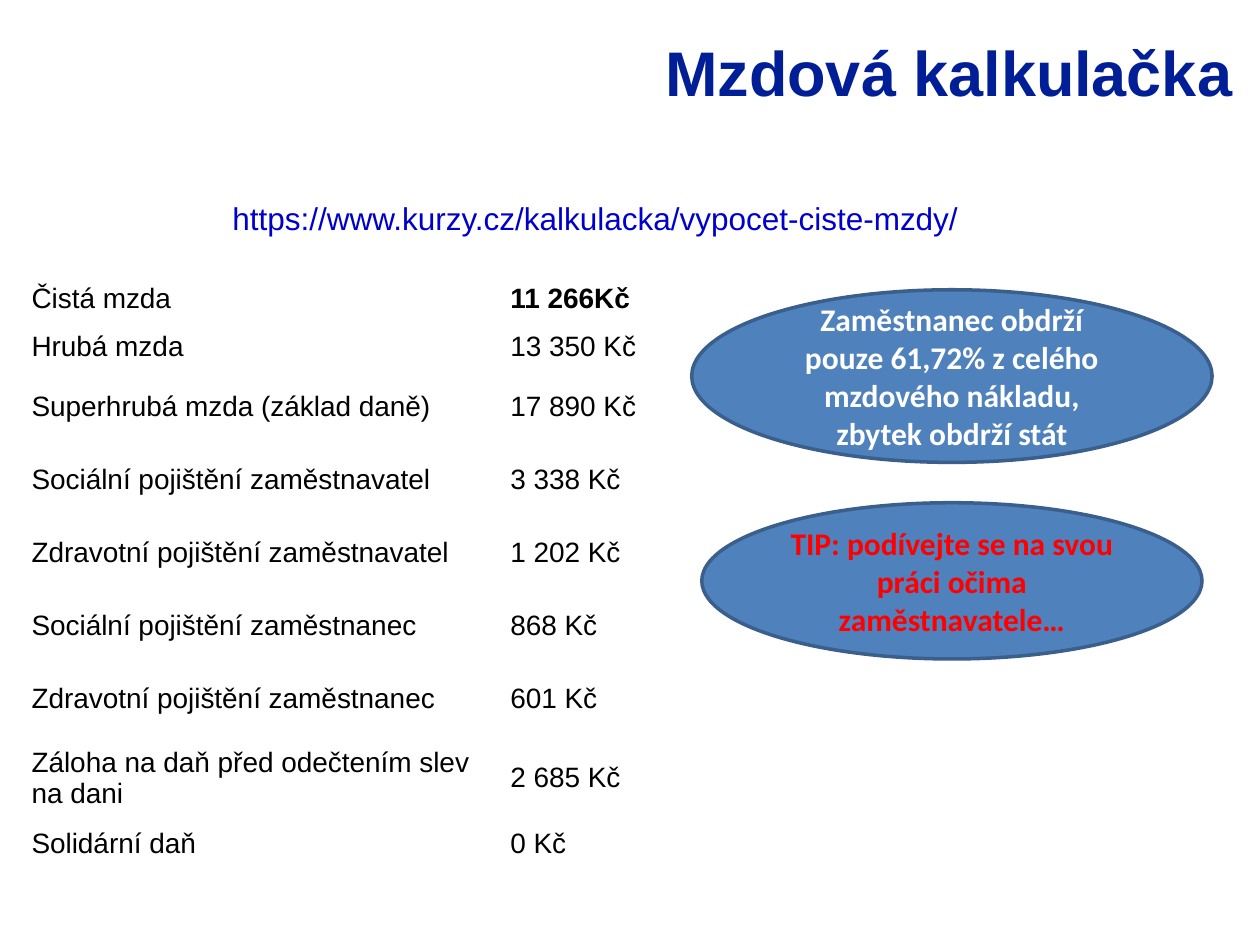
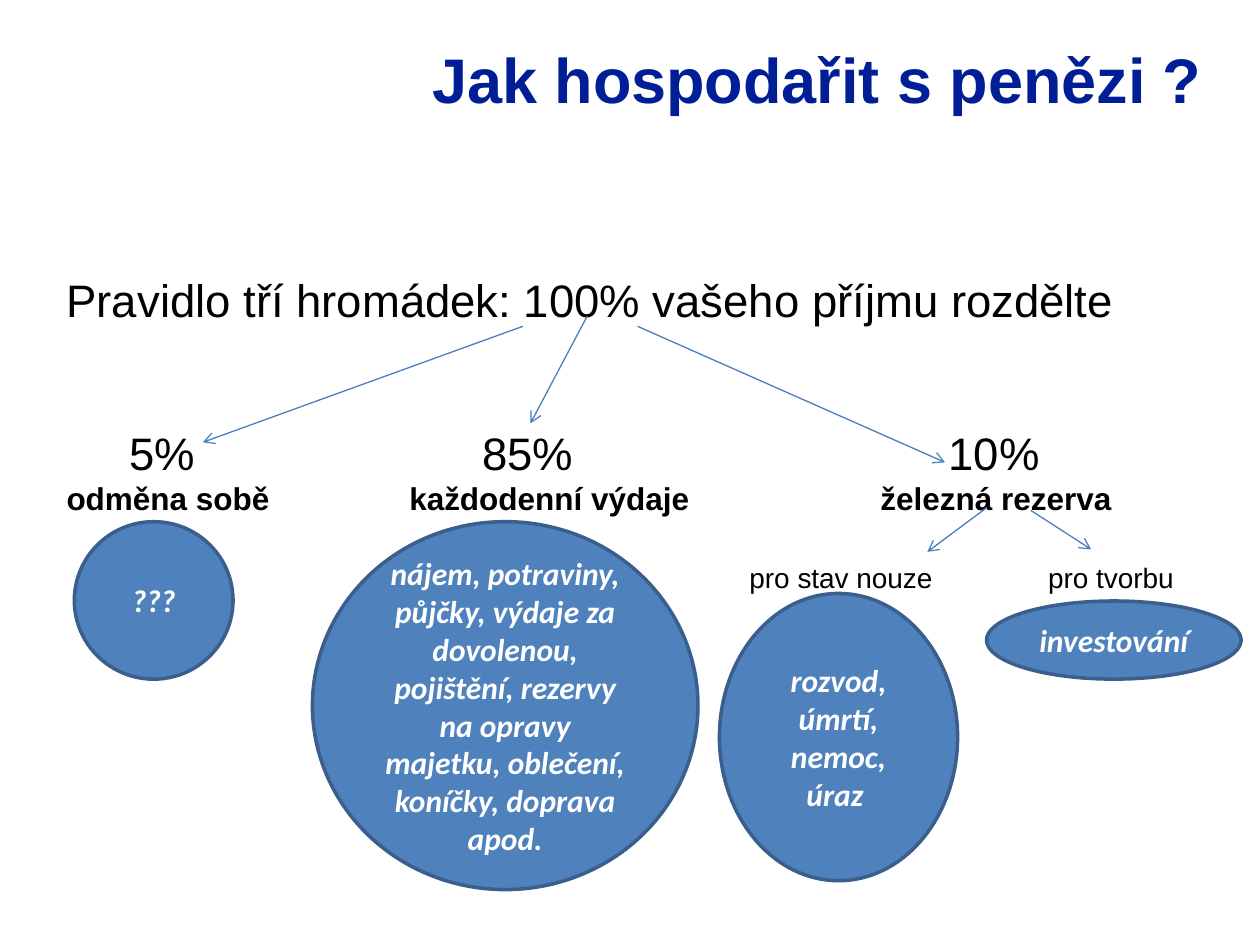
from dataclasses import dataclass

from lxml import etree
from pptx import Presentation
from pptx.dml.color import RGBColor
from pptx.enum.shapes import MSO_CONNECTOR as CONNECTOR, MSO_SHAPE as SHAPE
from pptx.enum.text import MSO_ANCHOR as ANCHOR, PP_ALIGN as ALIGN
from pptx.oxml.ns import qn
from pptx.util import Inches, Pt


@dataclass(frozen=True)
class Theme:
    text_font: str = "Arial"
    bubble_font: str = "Calibri"
    title: RGBColor = RGBColor(0x00, 0x1E, 0x96)
    address: RGBColor = RGBColor(0x00, 0x00, 0xCC)
    black: RGBColor = RGBColor(0x00, 0x00, 0x00)
    white: RGBColor = RGBColor(0xFF, 0xFF, 0xFF)
    tip: RGBColor = RGBColor(0xFF, 0x00, 0x00)
    bubble: RGBColor = RGBColor(0x4F, 0x81, 0xBD)
    outline: RGBColor = RGBColor(0x3A, 0x5F, 0x8C)
    arrow: RGBColor = RGBColor(0x4B, 0x7E, 0xBC)
    title_size: int = 36
    lead_size: int = 26
    label_size: int = 18
    small_size: int = 16


theme = Theme()


def add_run(paragraph, text, size, color=theme.black, font=theme.text_font,
            bold=False, italic=False):
    run = paragraph.add_run()
    run.text = text
    run.font.size = Pt(size)
    run.font.name = font
    run.font.color.rgb = color
    run.font.bold = bold
    run.font.italic = italic


def add_bubble(slide, box, text, color=theme.white, italic=False):
    """Add a blue ellipse with a bold centred note; box is left, top, width, height."""
    bubble = slide.shapes.add_shape(SHAPE.OVAL, *map(Inches, box))
    bubble.shadow.inherit = False
    bubble.fill.solid()
    bubble.fill.fore_color.rgb = theme.bubble
    bubble.line.color.rgb = theme.outline
    bubble.line.width = Pt(2)
    bubble.text_frame.word_wrap = True
    bubble.text_frame.vertical_anchor = ANCHOR.MIDDLE
    note = bubble.text_frame.paragraphs[0]
    note.alignment = ALIGN.CENTER
    add_run(note, text, theme.label_size, color, theme.bubble_font, True, italic)


prs = Presentation()
prs.slide_width, prs.slide_height = Inches(10), Inches(7.5)
blank = prs.slide_layouts[6]

# Both slides open with a right-aligned title
titles = [
    ("Mzdová kalkulačka", (2.87, 0.22, 7.01, 1.06)),
    ("Jak hospodařit s penězi ?", (2.4, 0.27, 7.24, 1.5)),
]
for title, box in titles:
    slide = prs.slides.add_slide(blank)
    frame = slide.shapes.add_textbox(*map(Inches, box)).text_frame
    frame.word_wrap = True
    frame.paragraphs[0].alignment = ALIGN.RIGHT
    add_run(frame.paragraphs[0], title, theme.title_size, theme.title, bold=True)
calculator, budget = prs.slides

# Wage calculator: address, wage table, two remarks
address = calculator.shapes.add_textbox(
    Inches(0.79), Inches(1.53), Inches(7.87), Inches(0.4)).text_frame
address.word_wrap = True
address.paragraphs[0].alignment = ALIGN.CENTER
add_run(address.paragraphs[0], "https://www.kurzy.cz/kalkulacka/vypocet-ciste-mzdy/",
        theme.label_size, theme.address)

wages = [
    ("Čistá mzda", "11 266Kč", 0.38),
    ("Hrubá mzda", "13 350 Kč", 0.38),
    ("Superhrubá mzda (základ daně)", "17 890 Kč", 0.58),
    ("Sociální pojištění zaměstnavatel", "3 338 Kč", 0.58),
    ("Zdravotní pojištění zaměstnavatel", "1 202 Kč", 0.58),
    ("Sociální pojištění zaměstnanec", "868 Kč", 0.58),
    ("Zdravotní pojištění zaměstnanec", "601 Kč", 0.58),
    ("Záloha na daň před odečtením slev na dani", "2 685 Kč", 0.67),
    ("Solidární daň", "0 Kč", 0.38),
]
wage_table = calculator.shapes.add_table(
    len(wages), 2, Inches(0.17), Inches(2.18), Inches(5.32), Inches(4.71)).table
wage_table.first_row = wage_table.horz_banding = False
wage_table.columns[0].width = Inches(3.8)
wage_table.columns[1].width = Inches(1.52)
for row, (item, amount, height) in enumerate(wages):
    wage_table.rows[row].height = Inches(height)
    for column, text in enumerate((item, amount)):
        cell = wage_table.cell(row, column)
        cell.fill.background()
        cell.vertical_anchor = ANCHOR.MIDDLE
        cell.margin_left = cell.margin_right = Inches(0.08)
        cell.margin_top = cell.margin_bottom = Inches(0.04)
        add_run(cell.text_frame.paragraphs[0], text, theme.small_size,
                bold=(row == 0 and column == 1))

add_bubble(calculator, (5.49, 2.3, 4.13, 1.37),
           "Zaměstnanec obdrží pouze 61,72% z celého mzdového nákladu, zbytek obdrží stát")
add_bubble(calculator, (5.57, 3.99, 3.97, 1.24),
           "TIP: podívejte se na svou práci očima zaměstnavatele…", theme.tip)

# Three piles: lines of text set in columns by tab stops (inches)
pile_lines = [
    ("Pravidlo tří hromádek: 100% vašeho příjmu rozdělte", [], theme.lead_size, False, 0),
    ("\t5%\t85%\t10%", [0.5, 3.3, 7], theme.lead_size, False, 56),
    ("odměna sobě\tkaždodenní výdaje\tželezná rezerva", [2.72, 6.46],
     theme.label_size, True, 0),
    ("\tpro stav nouze\tpro tvorbu", [5.42, 7.79], theme.small_size, False, 25),
]
piles = budget.shapes.add_textbox(
    Inches(0.43), Inches(2.11), Inches(9.3), Inches(4.95)).text_frame
piles.word_wrap = True
for index, (text, stops, size, bold, gap) in enumerate(pile_lines):
    line = piles.add_paragraph() if index else piles.paragraphs[0]
    line.space_before = Pt(gap)
    if stops:
        tab_list = etree.SubElement(line._p.get_or_add_pPr(), qn("a:tabLst"))
        for stop in stops:
            etree.SubElement(tab_list, qn("a:tab"), pos=str(Inches(stop)), algn="l")
    add_run(line, text, size, bold=bold)

arrows = [
    (4.15, 2.59, 1.61, 3.51),
    (5.06, 2.59, 7.5, 3.67),
    (4.66, 2.51, 4.21, 3.36),
    (7.83, 4.03, 7.36, 4.38),
    (8.18, 4.05, 8.66, 4.36),
]
for ends in arrows:
    arrow = budget.shapes.add_connector(CONNECTOR.STRAIGHT, *map(Inches, ends))
    arrow.line.color.rgb = theme.arrow
    arrow.line.width = Pt(0.75)
    etree.SubElement(arrow.line._get_or_add_ln(), qn("a:tailEnd"), type="arrow")
    etree.SubElement(arrow._element.spPr, qn("a:effectLst"))

pile_contents = [
    ((2.48, 4.14, 3.06, 2.92),
     "nájem, potraviny, půjčky, výdaje za dovolenou, pojištění, rezervy na opravy "
     "majetku, oblečení, koníčky, doprava apod."),
    ((5.71, 4.71, 1.89, 2.28), "rozvod, úmrtí, nemoc, úraz "),
    ((7.83, 4.77, 2.02, 0.62), "investování"),
    ((0.59, 4.14, 1.26, 1.25), "???"),
]
for box, text in pile_contents:
    add_bubble(budget, box, text, italic=True)

prs.save("out.pptx")
